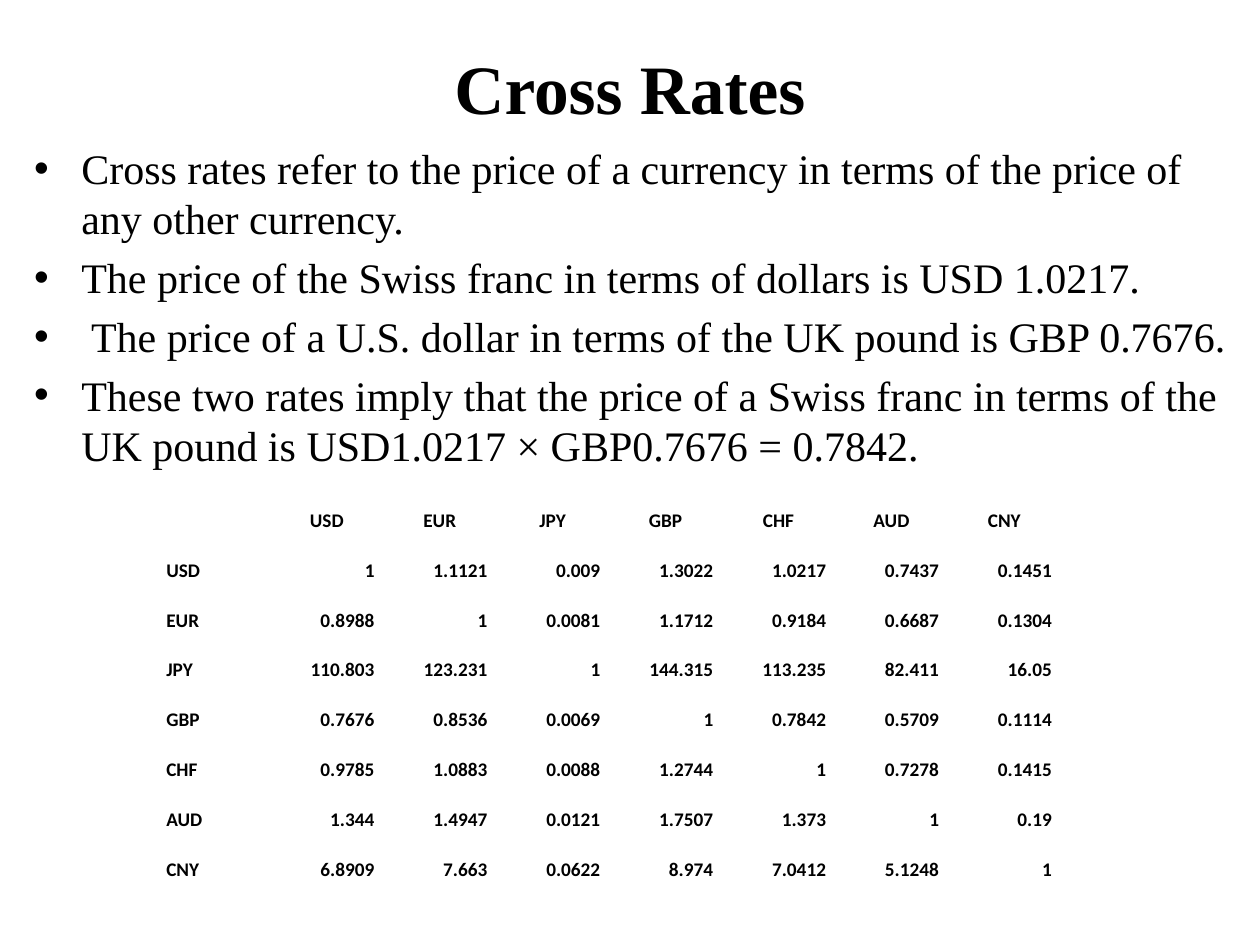
import pptx
import pptx.dml.color
import pptx.enum.text
import pptx.util
from pptx.util import Inches

COLORS = {"text": "000000"}
ALIGN = pptx.enum.text.PP_ALIGN

CURRENCIES = ["USD", "EUR", "JPY", "GBP", "CHF", "AUD", "CNY"]
RATES = [
    ["1", "1.1121", "0.009", "1.3022", "1.0217", "0.7437", "0.1451"],
    ["0.8988", "1", "0.0081", "1.1712", "0.9184", "0.6687", "0.1304"],
    ["110.803", "123.231", "1", "144.315", "113.235", "82.411", "16.05"],
    ["0.7676", "0.8536", "0.0069", "1", "0.7842", "0.5709", "0.1114"],
    ["0.9785", "1.0883", "0.0088", "1.2744", "1", "0.7278", "0.1415"],
    ["1.344", "1.4947", "0.0121", "1.7507", "1.373", "1", "0.19"],
    ["6.8909", "7.663", "0.0622", "8.974", "7.0412", "5.1248", "1"],
]
BULLETS = [
    "Cross rates refer to the price of a currency in terms of the price of any other currency.",
    "The price of the Swiss franc in terms of dollars is USD 1.0217.",
    " The price of a U.S. dollar in terms of the UK pound is GBP 0.7676.",
    "These two rates imply that the price of a Swiss franc in terms of the UK pound is "
    "USD1.0217 × GBP0.7676 = 0.7842.",
]


def write(para, text, size, font="Times New Roman", bold=False, align=None, spacing=None):
    para.alignment = align
    para.line_spacing = spacing
    span = para.add_run()
    span.text = text
    span.font.size = pptx.util.Pt(size)
    span.font.name = font
    span.font.bold = bold
    span.font.color.rgb = pptx.dml.color.RGBColor.from_string(COLORS["text"])


def place(box, left, top, width, height):
    box.left, box.top = Inches(left), Inches(top)
    box.width, box.height = Inches(width), Inches(height)
    box.text_frame.auto_size = pptx.enum.text.MSO_AUTO_SIZE.NONE


deck = pptx.Presentation()
deck.slide_width, deck.slide_height = Inches(10), Inches(7.5)
page = deck.slides.add_slide(deck.slide_layouts[1])

# Title
title = page.shapes.title
place(title, 0.5, 0.3, 9, 0.78)
write(title.text_frame.paragraphs[0], "Cross Rates", 39.6, bold=True, align=ALIGN.CENTER)

# Bullets, with the template's marks, indents and spacing
body = page.placeholders[1]
place(body, 0.17, 1.08, 9.67, 6)
for index, bullet in enumerate(BULLETS):
    frame = body.text_frame
    para = frame.add_paragraph() if index else frame.paragraphs[0]
    write(para, bullet, 24)

# Table of cross rates
rows = [[""] + CURRENCIES] + [[name] + rates for name, rates in zip(CURRENCIES, RATES)]
count = len(rows)
table = page.shapes.add_table(
    count, count, Inches(1.25), Inches(3.83), Inches(7.17), Inches(3.17)
).table
table.first_row = False
table.horz_banding = False

for row_index, row in enumerate(rows):
    for column_index, text in enumerate(row):
        cell = table.cell(row_index, column_index)
        cell.fill.background()
        cell.vertical_anchor = pptx.enum.text.MSO_ANCHOR.BOTTOM
        cell.margin_left = cell.margin_right = Inches(0.07)
        cell.margin_top = cell.margin_bottom = 0
        if not text:
            continue
        if row_index == 0:
            align = ALIGN.CENTER
        elif column_index == 0:
            align = ALIGN.LEFT
        else:
            align = ALIGN.RIGHT
        write(cell.text_frame.paragraphs[0], text, 11, font="Calibri", bold=True,
              align=align, spacing=1.15)

deck.save("out.pptx")
